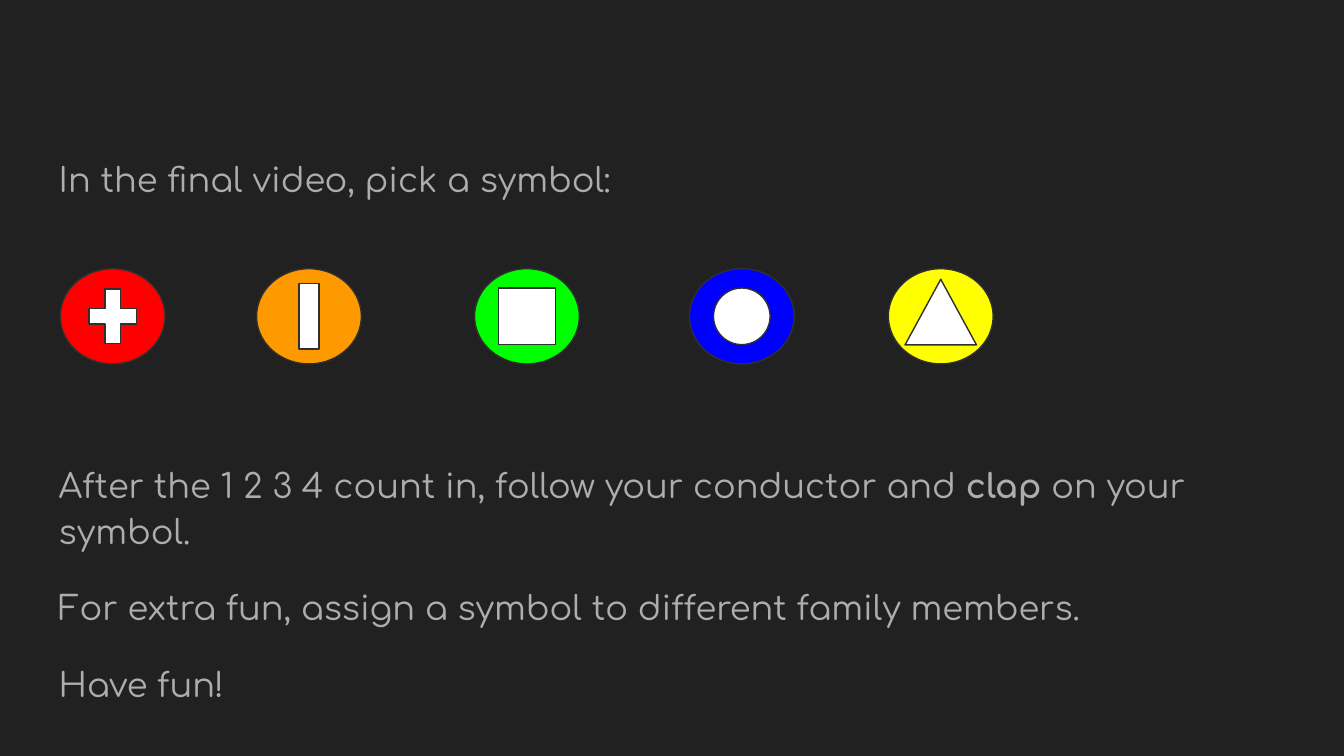
from lxml import etree
from pptx import Presentation
from pptx.dml.color import RGBColor
from pptx.enum.shapes import MSO_SHAPE
from pptx.enum.text import MSO_ANCHOR, MSO_AUTO_SIZE, PP_ALIGN
from pptx.oxml.ns import qn
from pptx.util import Cm, Pt

OVAL = MSO_SHAPE.OVAL
PLUS = MSO_SHAPE.MATH_PLUS
RECTANGLE = MSO_SHAPE.RECTANGLE
CONNECTOR = MSO_SHAPE.FLOWCHART_CONNECTOR
TRIANGLE = MSO_SHAPE.ISOSCELES_TRIANGLE
TOP = MSO_ANCHOR.TOP
NO_AUTOFIT = MSO_AUTO_SIZE.NONE
LEFT = PP_ALIGN.LEFT

BACKGROUND = RGBColor(0x21, 0x21, 0x21)
TEXT = RGBColor(0xAD, 0xAD, 0xAD)
OUTLINE = RGBColor(0x30, 0x30, 0x30)
WHITE = RGBColor(0xFF, 0xFF, 0xFF)
RED = RGBColor(0xFF, 0x00, 0x00)
ORANGE = RGBColor(0xFF, 0x99, 0x00)
GREEN = RGBColor(0x00, 0xFF, 0x00)
BLUE = RGBColor(0x00, 0x00, 0xFF)
YELLOW = RGBColor(0xFF, 0xFF, 0x00)

FONT = "Comfortaa"
BADGE_WIDTH, BADGE_HEIGHT = 1.98, 1.8

PARAGRAPHS = [
    (["In the final video, pick a symbol:"], 0),
    (["After the 1 2 3 4 count in, follow your conductor and ", "clap", " on your symbol."], 139),
    (["For extra fun, assign a symbol to different family members."], 16),
    (["Have fun!"], 16),
]

BADGES = [
    (1.14, RED, PLUS, 1.22, 1.4, 0),
    (4.85, ORANGE, RECTANGLE, 0.38, 1.24, 0),
    (8.97, GREEN, RECTANGLE, 1.07, 1.07, 0),
    (13.03, BLUE, CONNECTOR, 1.07, 1.07, 0),
    (16.79, YELLOW, TRIANGLE, 1.35, 1.24, -0.08),
]


def add_text(paragraph, text, size=18, bold=False, color=TEXT):
    run = paragraph.add_run()
    run.text = text
    run.font.name = FONT
    run.font.size = Pt(size)
    run.font.bold = bold
    run.font.color.rgb = color


def remove_bullet(paragraph):
    properties = paragraph._p.get_or_add_pPr()
    properties.set("marL", "0")
    properties.set("indent", "0")
    etree.SubElement(properties, qn("a:buNone"))


def fill_instructions(placeholder, left, top, width, height):
    placeholder.left, placeholder.top = Cm(left), Cm(top)
    placeholder.width, placeholder.height = Cm(width), Cm(height)
    frame = placeholder.text_frame
    frame.auto_size = NO_AUTOFIT
    frame.word_wrap = True
    frame.vertical_anchor = TOP
    frame.margin_left = frame.margin_right = frame.margin_bottom = Cm(0.25)
    frame.margin_top = Cm(1.7)
    for index, (texts, space_before) in enumerate(PARAGRAPHS):
        paragraph = frame.add_paragraph() if index else frame.paragraphs[0]
        paragraph.alignment = LEFT
        paragraph.line_spacing = 1.15
        paragraph.space_before = Pt(space_before)
        paragraph.space_after = Pt(0)
        remove_bullet(paragraph)
        for text in texts:
            add_text(paragraph, text, bold=text == "clap")


def add_outlined_shape(slide, kind, left, top, width, height, color):
    shape = slide.shapes.add_shape(kind, Cm(left), Cm(top), Cm(width), Cm(height))
    shape.shadow.inherit = False
    shape.fill.solid()
    shape.fill.fore_color.rgb = color
    shape.line.color.rgb = OUTLINE
    shape.line.width = Pt(0.75)


def add_badges(slide, top, width, height):
    for left, color, symbol, symbol_width, symbol_height, shift in BADGES:
        add_outlined_shape(slide, OVAL, left, top, width, height, color)
        symbol_left = left + (width - symbol_width) / 2
        symbol_top = top + (height - symbol_height) / 2 + shift
        add_outlined_shape(slide, symbol, symbol_left, symbol_top, symbol_width, symbol_height, WHITE)


def main():
    presentation = Presentation()
    presentation.slide_width = Cm(25.4)
    presentation.slide_height = Cm(14.29)
    slide = presentation.slides.add_slide(presentation.slide_layouts[1])
    slide.background.fill.solid()
    slide.background.fill.fore_color.rgb = BACKGROUND
    title = slide.shapes.title
    title.element.getparent().remove(title.element)
    fill_instructions(slide.placeholders[1], 0.86, 1.19, 23.67, 12.17)
    add_badges(slide, 5.08, BADGE_WIDTH, BADGE_HEIGHT)
    presentation.save("out.pptx")


if __name__ == "__main__":
    main()
